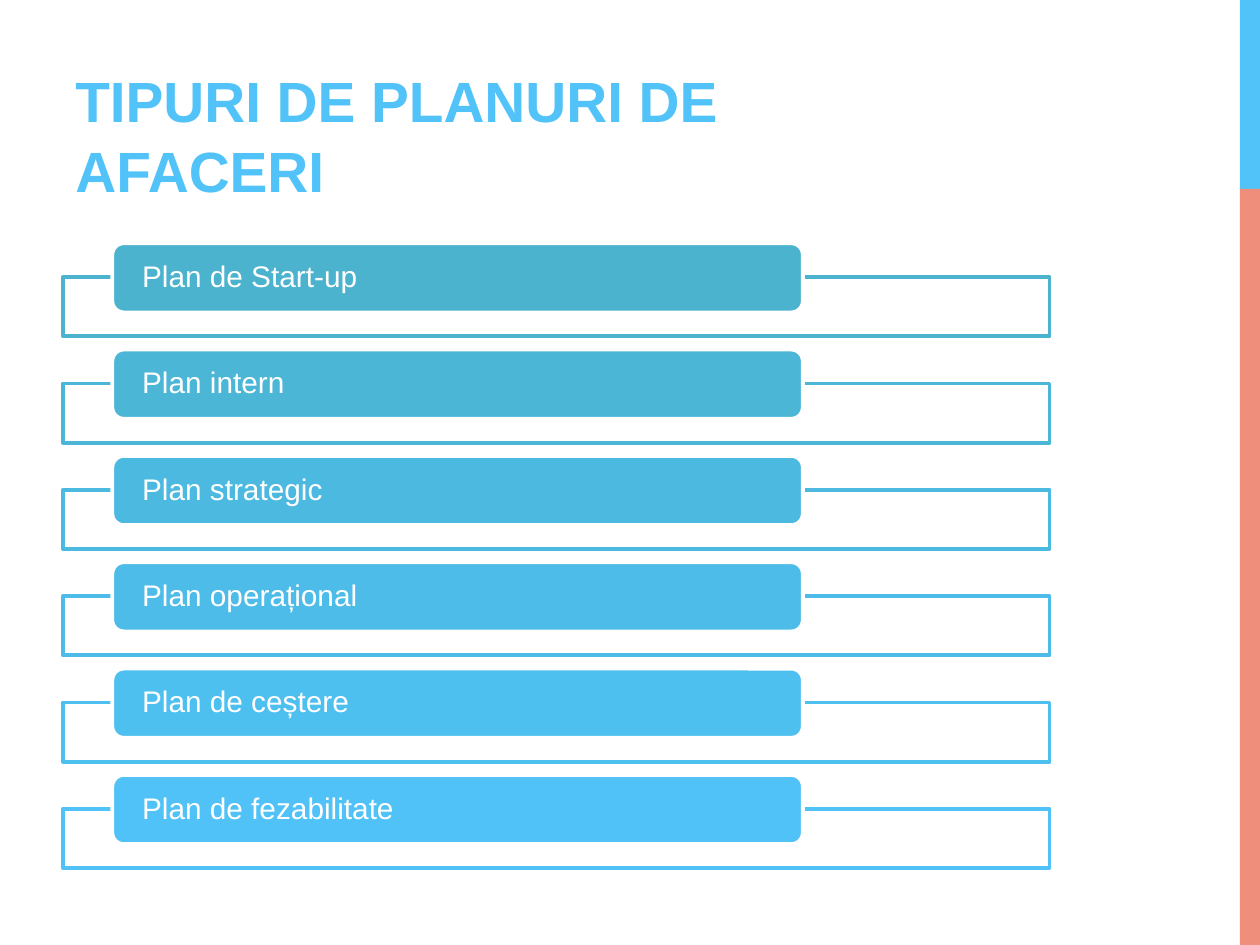
from lxml.etree import SubElement
from pptx import Presentation
from pptx.dml.color import RGBColor
from pptx.enum.shapes import MSO_SHAPE
from pptx.enum.text import MSO_ANCHOR, PP_ALIGN
from pptx.oxml.ns import qn
from pptx.util import Inches, Pt

WHITE = RGBColor(0xFF, 0xFF, 0xFF)
SKY = RGBColor(0x51, 0xC3, 0xF9)
CORAL = RGBColor(0xEF, 0x8E, 0x7B)
FONT = "Arial"

PLANS = [
    ("Plan de Start-up", RGBColor(0x4C, 0xB3, 0xCE)),
    ("Plan intern", RGBColor(0x4C, 0xB6, 0xD7)),
    ("Plan strategic", RGBColor(0x4C, 0xB9, 0xE0)),
    ("Plan operațional", RGBColor(0x4D, 0xBC, 0xE8)),
    ("Plan de ceștere", RGBColor(0x4E, 0xC0, 0xF0)),
    ("Plan de fezabilitate", RGBColor(0x50, 0xC2, 0xF7)),
]


def add_block(slide, kind, left, top, width, height, fill, line=None):
    shape = slide.shapes.add_shape(
        kind, Inches(left), Inches(top), Inches(width), Inches(height))
    shape.shadow.inherit = False
    shape.fill.solid()
    shape.fill.fore_color.rgb = fill
    if line is None:
        shape.line.fill.background()
    else:
        shape.line.color.rgb = line
        shape.line.width = Pt(2.25)
    return shape


def set_opacity(shape, percent):
    color = shape.fill._xPr.find(qn("a:solidFill"))[0]
    SubElement(color, qn("a:alpha"), val=str(percent * 1000))


def write_text(shape, text, size, color, anchor, inset, margin, spacing, bold=False):
    frame = shape.text_frame
    frame.word_wrap = True
    frame.vertical_anchor = anchor
    frame.margin_left = frame.margin_right = Inches(inset)
    frame.margin_top = frame.margin_bottom = Inches(margin)
    paragraph = frame.paragraphs[0]
    paragraph.alignment = PP_ALIGN.LEFT
    paragraph.line_spacing = spacing
    run = paragraph.add_run()
    run.text = text
    run.font.name = FONT
    run.font.size = Pt(size)
    run.font.bold = bold
    run.font.color.rgb = color


def add_side_band(slide, left, top, width, height):
    accent = height / 5
    add_block(slide, MSO_SHAPE.RECTANGLE, left, top, width, accent, SKY)
    add_block(slide, MSO_SHAPE.RECTANGLE, left, top + accent, width, height - accent, CORAL)


def add_title(slide, left, top, width, height):
    title = slide.shapes.add_textbox(
        Inches(left), Inches(top), Inches(width), Inches(height))
    write_text(title, "TIPURI DE PLANURI DE AFACERI", 32.4, SKY,
               MSO_ANCHOR.BOTTOM, 0.1, 0.05, 1.04, bold=True)


def add_plan_list(slide, left, top, width, height):
    bar_height, frame_height, frame_offset = 0.55, 0.47, 0.27
    pitch = (height - frame_offset - frame_height) / (len(PLANS) - 1)
    for index, (name, color) in enumerate(PLANS):
        row_top = top + index * pitch
        frame = add_block(slide, MSO_SHAPE.RECTANGLE, left, row_top + frame_offset,
                          width, frame_height, WHITE, color)
        set_opacity(frame, 90)
        bar = add_block(slide, MSO_SHAPE.ROUNDED_RECTANGLE, left + width * 0.05, row_top,
                        width * 0.7, bar_height, color, WHITE)
        write_text(bar, name, 17, WHITE, MSO_ANCHOR.MIDDLE, 0.21, 0, 0.9)


def main():
    presentation = Presentation()
    presentation.slide_width = Inches(10)
    presentation.slide_height = Inches(7.5)
    slide = presentation.slides.add_slide(presentation.slide_layouts[6])
    add_side_band(slide, 9.84, 0, 0.16, 7.5)
    add_title(slide, 0.5, 0.17, 6.33, 1.5)
    add_plan_list(slide, 0.5, 1.93, 7.83, 4.96)
    presentation.save("out.pptx")


if __name__ == "__main__":
    main()
